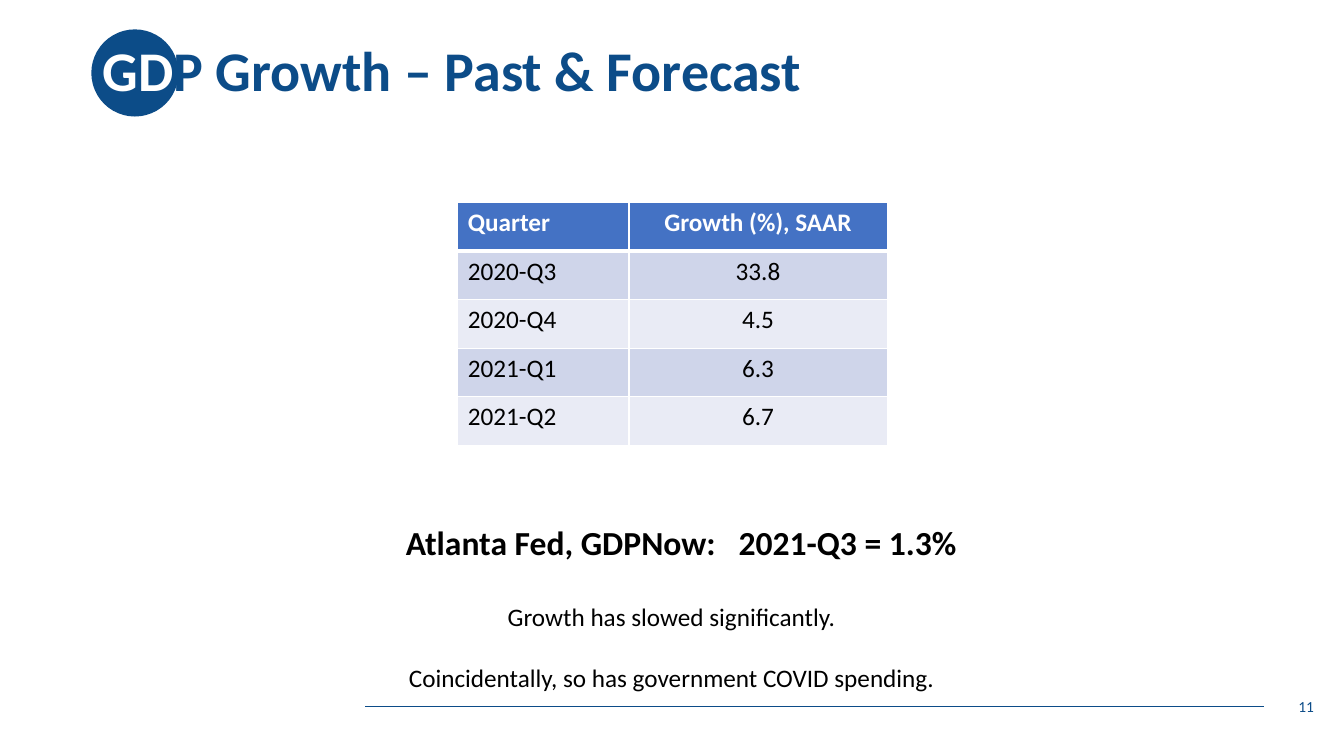
from dataclasses import dataclass

from lxml import etree
from pptx import Presentation, util as u
from pptx.dml.color import RGBColor
from pptx.enum import shapes, text
from pptx.oxml import ns

PX = 9525


@dataclass(frozen=True)
class Theme:
    """Colours, font and type sizes of the deck."""
    navy: str = "0C4C88"
    white: str = "FFFFFF"
    black: str = "000000"
    header: str = "4472C4"
    bands: tuple = ("CFD5EA", "E9EBF5")
    face: str = "Calibri"
    title: int = 40
    callout: int = 24
    body: int = 18
    number: int = 11


THEME = Theme()
LEFT, CENTER, RIGHT = text.PP_ALIGN.LEFT, text.PP_ALIGN.CENTER, text.PP_ALIGN.RIGHT
GROWTH = [("Quarter", "Growth (%), SAAR"), ("2020-Q3", "33.8"), ("2020-Q4", "4.5"),
          ("2021-Q1", "6.3"), ("2021-Q2", "6.7")]


def emu(*lengths):
    """Turn px lengths into EMU."""
    return [u.Emu(length * PX) for length in lengths]


def rgb(code):
    """Return the colour for a hex code."""
    return RGBColor.from_string(code)


def style(paragraph, size, color, bold=False, align=LEFT):
    """Set the alignment and font of a paragraph."""
    paragraph.alignment = align
    font = paragraph.font
    font.name, font.size, font.bold = THEME.face, u.Pt(size), bold
    font.color.rgb = rgb(color)


def add_text(slide, box, anchor=text.MSO_ANCHOR.TOP):
    """Add a wrapping text box and return its frame."""
    frame = slide.shapes.add_textbox(*emu(*box)).text_frame
    frame.word_wrap, frame.vertical_anchor = True, anchor
    return frame


def add_heading(slide, box):
    """Place the title over a round badge at the left of the box."""
    left, top, width, height = box
    diameter = 83
    heading = slide.shapes.title
    heading.left, heading.top, heading.width, heading.height = emu(*box)
    badge = slide.shapes.add_shape(
        shapes.MSO_SHAPE.OVAL,
        *emu(left - 1, top + (height - diameter) // 2, diameter, diameter))
    badge.shadow.inherit = False
    badge.fill.solid()
    badge.fill.fore_color.rgb = rgb(THEME.navy)
    badge.line.fill.background()
    heading.element.addprevious(badge.element)

    frame = heading.text_frame
    frame.auto_size = text.MSO_AUTO_SIZE.NONE
    frame.vertical_anchor = text.MSO_ANCHOR.MIDDLE
    line = frame.paragraphs[0]
    line.line_spacing = 0.9
    style(line, THEME.title, THEME.navy, bold=True)
    for words, color in (("GD", THEME.white), ("P Growth – Past & Forecast", THEME.navy)):
        run = line.add_run()
        run.text = words
        run.font.color.rgb = rgb(color)


def add_borders(cell, top, bottom):
    """Draw white cell borders, with top and bottom widths in points."""
    properties = cell._tc.get_or_add_tcPr()
    for side, points in (("L", 1), ("R", 1), ("T", top), ("B", bottom)):
        edge = etree.SubElement(properties, ns.qn(f"a:ln{side}"), w=str(u.Pt(points)))
        fill = etree.SubElement(edge, ns.qn("a:solidFill"))
        etree.SubElement(fill, ns.qn("a:srgbClr"), val=THEME.white)


def add_growth_table(slide, box):
    """Fill the box with quarterly growth under a header row."""
    width, height = box[2:]
    table = slide.shapes.add_table(len(GROWTH), 2, *emu(*box)).table
    quarter_width = width * 2 // 5
    for column, column_width in zip(table.columns, emu(quarter_width, width - quarter_width)):
        column.width = column_width
    for r, values in enumerate(GROWTH):
        table.rows[r].height = u.Emu(height * PX // len(GROWTH))
        is_header = r == 0
        fill = THEME.header if is_header else THEME.bands[(r - 1) % 2]
        for c, value in enumerate(values):
            cell = table.cell(r, c)
            add_borders(cell, 3 if r == 1 else 1, 3 if is_header else 1)
            cell.fill.solid()
            cell.fill.fore_color.rgb = rgb(fill)
            cell.text = value
            style(cell.text_frame.paragraphs[0], THEME.body,
                  THEME.white if is_header else THEME.black,
                  is_header, CENTER if c else LEFT)


def add_forecast(slide, box):
    """Write the forecast with its figure at a tab stop."""
    forecast = add_text(slide, box).paragraphs[0]
    forecast.text = "Atlanta Fed, GDPNow:\t2021-Q3 = 1.3%"
    tabs = etree.SubElement(forecast._p.get_or_add_pPr(), ns.qn("a:tabLst"))
    etree.SubElement(tabs, ns.qn("a:tab"), pos=str(317 * PX), algn="l")
    style(forecast, THEME.callout, THEME.black, bold=True)


def add_remarks(slide, box):
    """Write the centred remarks one line apart."""
    frame = add_text(slide, box)
    frame.text = ("Growth has slowed significantly.\n"
                  "Coincidentally, so has government COVID spending.")
    for remark in frame.paragraphs:
        style(remark, THEME.body, THEME.black, align=CENTER)
    frame.paragraphs[1].space_before = u.Pt(22)


def add_footer(slide, box):
    """Draw the rule and the page number right of it."""
    left, top, width, height = box
    middle = top + height // 2
    rule = slide.shapes.add_connector(
        shapes.MSO_CONNECTOR.STRAIGHT, *emu(left, middle, left + 856, middle))
    rule.line.color.rgb, rule.line.width = rgb(THEME.navy), u.Pt(0.5)
    etree.SubElement(rule.element.spPr, ns.qn("a:effectLst"))
    number_width = 288
    page = add_text(slide, (left + width - number_width, top, number_width, height),
                    text.MSO_ANCHOR.MIDDLE).paragraphs[0]
    page.text = "11"
    style(page, THEME.number, THEME.navy, align=RIGHT)


def main():
    """Build and save the slide."""
    deck = Presentation()
    deck.slide_width, deck.slide_height = emu(1280, 720)
    slide = deck.slides.add_slide(deck.slide_layouts[5])
    add_heading(slide, (88, 0, 1104, 139))
    add_growth_table(slide, (436, 193, 409, 231))
    add_forecast(slide, (377, 492, 560, 48))
    add_remarks(slide, (377, 568, 525, 97))
    add_footer(slide, (348, 654, 913, 38))
    deck.save("out.pptx")


if __name__ == "__main__":
    main()
